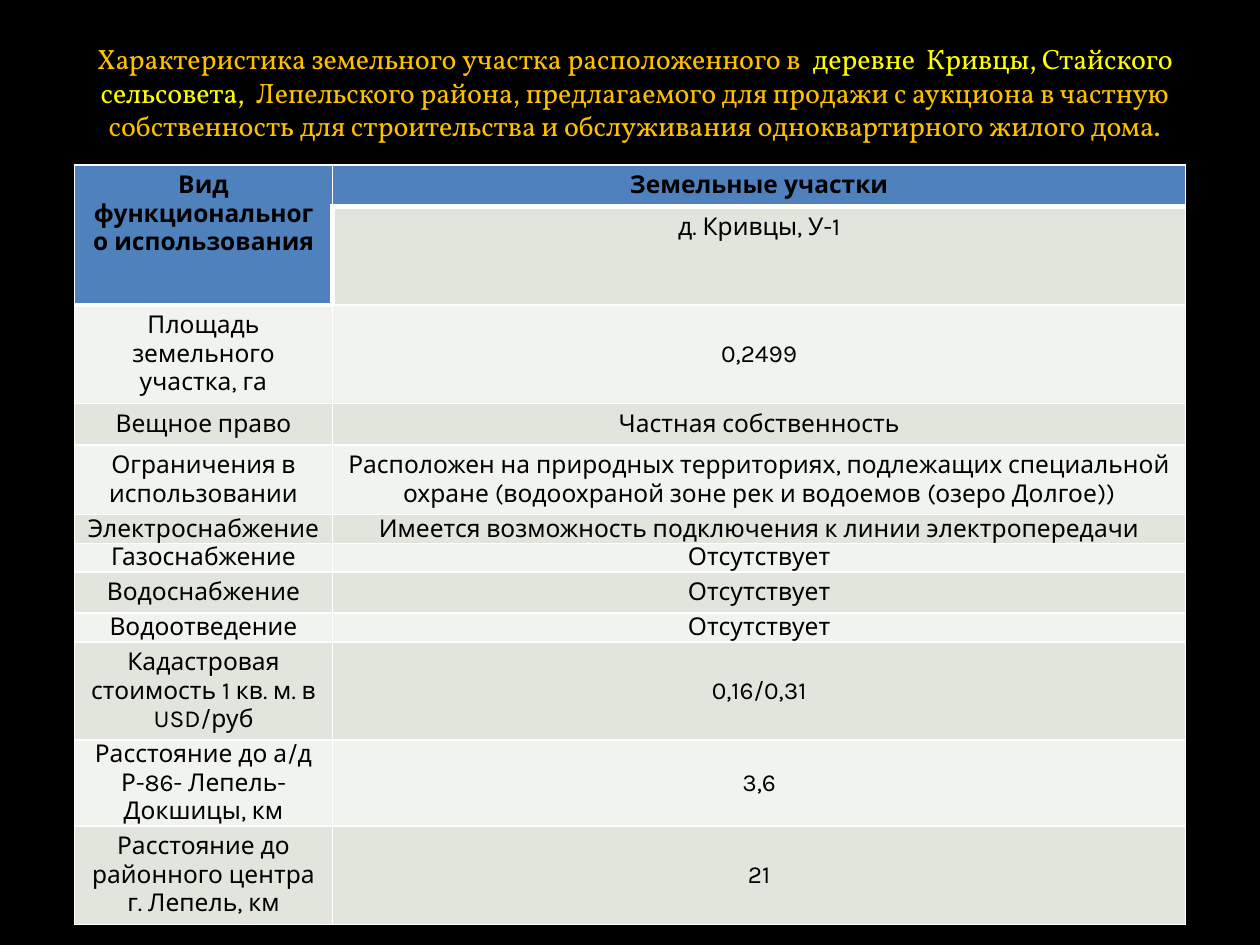
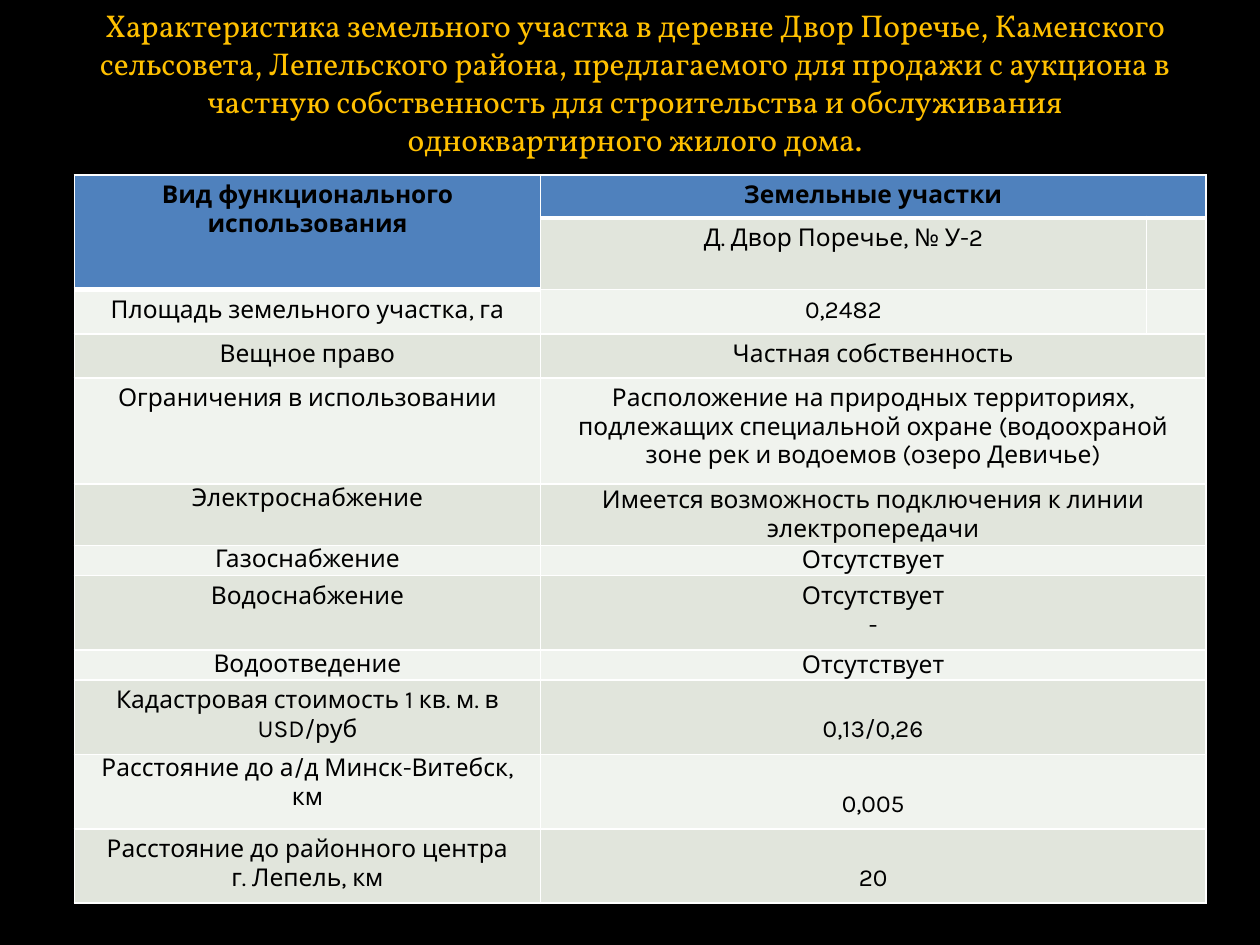
from lxml.etree import SubElement
from pptx import Presentation
from pptx.dml.color import RGBColor as Rgb
from pptx.enum.text import MSO_ANCHOR as Anchor, MSO_AUTO_SIZE as Fit, PP_ALIGN as Align
from pptx.oxml import parse_xml
from pptx.oxml.ns import nsdecls, qn
from pptx.util import Inches, Pt

COLORS = {
    "back": "000000", "text": "000000", "line": "FFFFFF", "head": "4F81BD",
    "dark": "E1E5DC", "light": "F0F3EE", "gold": "FFC000", "yellow": "FFFF00",
}
TITLE_FONT, BODY_FONT = "Vollkorn", "Karla"
BODY_SIZE = 14
WIDE, HIGH = 100, 75  # slide grid, in units
UNIT = Inches(0.1)
LEFT = 5.9
THIN, THICK = 1, 3
TITLE_LEFT, TITLE_WIDTH = 6.7, 87.4
TIGHT = (5, 6, 8)  # rows without vertical padding
ROAD = 10
OFFSET = (2, 9, 10, 11)  # rows whose value sits lower in the cell


def units(count):
    return int(count * UNIT)


def rgb(name):
    return Rgb.from_string(COLORS[name])


def add_title(slide, top, height, size, parts):
    """Fill the title from (text, colour name) parts."""
    title = slide.shapes.title
    title.left, title.top = units(TITLE_LEFT), units(top)
    title.width, title.height = units(TITLE_WIDTH), units(height)
    frame = title.text_frame
    frame.word_wrap = True
    frame.auto_size = Fit.NONE
    frame.vertical_anchor = Anchor.TOP
    frame.margin_left = frame.margin_right = units(0.5)
    para = frame.paragraphs[0]
    para.alignment = Align.CENTER
    for text, color in parts:
        run = para.add_run()
        run.text = text
        run.font.name, run.font.size = TITLE_FONT, Pt(size)
        run.font.color.rgb = rgb(color)


def set_edges(cell, **widths):
    """Draw the four borders; widths override the thin default."""
    props = cell._tc.get_or_add_tcPr()
    for place, side in enumerate("LRTB"):
        width = Pt(widths.get(side, THIN))
        props.insert(place, parse_xml(
            f'<a:ln{side} {nsdecls("a")} w="{width}"><a:solidFill>'
            f'<a:srgbClr val="{COLORS["line"]}"/></a:solidFill></a:ln{side}>'))


def fill_cell(cell, text, color, bold=False):
    cell.fill.solid()
    cell.fill.fore_color.rgb = rgb(color)
    cell.text_frame.text = text
    if not text:
        cell.margin_top = cell.margin_bottom = 0
    for para in cell.text_frame.paragraphs:
        para.alignment = Align.CENTER
        for run in para.runs:
            font = run.font
            font.name, font.size, font.bold = BODY_FONT, Pt(BODY_SIZE), bold
            font.color.rgb = rgb("text")
        if not para.runs:
            SubElement(para._p, qn("a:endParaRPr"), sz=str(BODY_SIZE * 100))


def pad_tight(cell):
    cell.margin_left = cell.margin_right = Inches(0.07)
    cell.margin_top = cell.margin_bottom = 0


def place_value(cell, row, drop):
    """Centre the value, or drop it by the given units."""
    if row in TIGHT:
        pad_tight(cell)
        cell.vertical_anchor = Anchor.MIDDLE
    elif row in OFFSET and drop is None:
        cell.vertical_anchor = Anchor.MIDDLE
    elif row in OFFSET[1:]:
        cell.margin_top = units(drop)


def add_plot(slide, top, cols, rows, labels, values, drop=None):
    """Add the table of one plot; a third column stays empty."""
    frame = slide.shapes.add_table(
        len(rows), len(cols), units(LEFT), units(top),
        units(sum(cols)), units(sum(rows)))
    table = frame.table
    table.first_row = table.horz_banding = False
    for col, width in zip(table.columns, cols):
        col.width = units(width)
    for row, height in zip(table.rows, rows):
        row.height = units(height)

    last = len(cols) - 1
    for row, pair in enumerate(zip(labels, values)):
        for col in range(len(cols)):
            cell = table.cell(row, col)
            head = row == 0 or (row == 1 and col == 0)
            color = "head" if head else "dark" if row % 2 else "light"
            fill_cell(cell, pair[col] if col < 2 else "", color, head)
            edges = {}
            if head:
                edges["B"] = THICK
            if (row == 1 and col > 0) or (row == 2 and col == 0):
                edges["T"] = THICK
            if row == 1 and col == 1 and last == 1:
                edges["L"] = THICK
            set_edges(cell, **edges)
        if row in TIGHT or row == ROAD:
            pad_tight(table.cell(row, 0))
        place_value(table.cell(row, 1), row, drop)
        if last > 1 and row not in (1, 2):
            table.cell(row, 1).merge(table.cell(row, last))
    table.cell(0, 0).merge(table.cell(1, 0))


def list_labels(road):
    return [
        "Вид функционального использования", "",
        "Площадь земельного участка, га", "Вещное право",
        "Ограничения в использовании", "Электроснабжение", "Газоснабжение",
        "Водоснабжение", "Водоотведение",
        "Кадастровая стоимость 1 кв. м. в USD/руб",
        f"Расстояние до а/д {road}, км",
        "Расстояние до районного центра\nг. Лепель, км",
    ]


def list_values(name, area, limits, water, price, road, town):
    return [
        "Земельные участки", name, area, "Частная собственность", limits,
        "Имеется возможность подключения к линии электропередачи",
        "Отсутствует", water, "Отсутствует", price, road, town,
    ]


def new_slide(deck):
    slide = deck.slides.add_slide(deck.slide_layouts[5])
    slide.background.fill.solid()
    slide.background.fill.fore_color.rgb = rgb("back")
    return slide


def add_krivtsy(deck):
    slide = new_slide(deck)
    add_plot(
        slide, 13.1, [20.5, 67.7],
        [3.3, 7.7, 7.8, 3.3, 5.5, 2.2, 2.2, 3.2, 2.2, 7.8, 6.8, 7.8],
        list_labels("Р-86- Лепель-Докшицы"),
        list_values(
            "д. Кривцы, У-1", "0,2499",
            "Расположен на природных территориях, подлежащих специальной "
            "охране (водоохраной зоне рек и водоемов (озеро Долгое))",
            "Отсутствует", "0,16/0,31", "3,6", "21"))
    add_title(slide, 2.8, 9.1, 16, [
        ("Характеристика земельного участка расположенного в  ", "gold"),
        ("деревне  Кривцы, Стайского сельсовета,  ", "yellow"),
        ("Лепельского района, предлагаемого для продажи с аукциона в частную "
         "собственность для строительства и обслуживания одноквартирного "
         "жилого дома.", "gold")])


def add_dvor(deck):
    slide = new_slide(deck)
    add_title(slide, 0, 13.1, 18, [
        ("Характеристика земельного участка в деревне Двор Поречье, "
         "Каменского сельсовета, Лепельского района, предлагаемого для "
         "продажи с аукциона в частную собственность для строительства и "
         "обслуживания одноквартирного жилого дома.", "gold")])
    add_plot(
        slide, 13.9, [37, 48.1, 4.7],
        [3.4, 5.7, 3.5, 3.5, 8.4, 4.9, 2.4, 5.9, 2.4, 5.9, 5.9, 5.9],
        list_labels("Минск-Витебск"),
        list_values(
            "Д. Двор Поречье, № У-2", "0,2482",
            "Расположение на природных территориях, подлежащих специальной "
            "охране (водоохраной зоне рек и водоемов (озеро Девичье)",
            "Отсутствует\n-", "0,13/0,26", "0,005", "20"),
        drop=2.8)


def main():
    deck = Presentation()
    deck.slide_width, deck.slide_height = units(WIDE), units(HIGH)
    add_krivtsy(deck)
    add_dvor(deck)
    deck.save("out.pptx")


if __name__ == "__main__":
    main()
